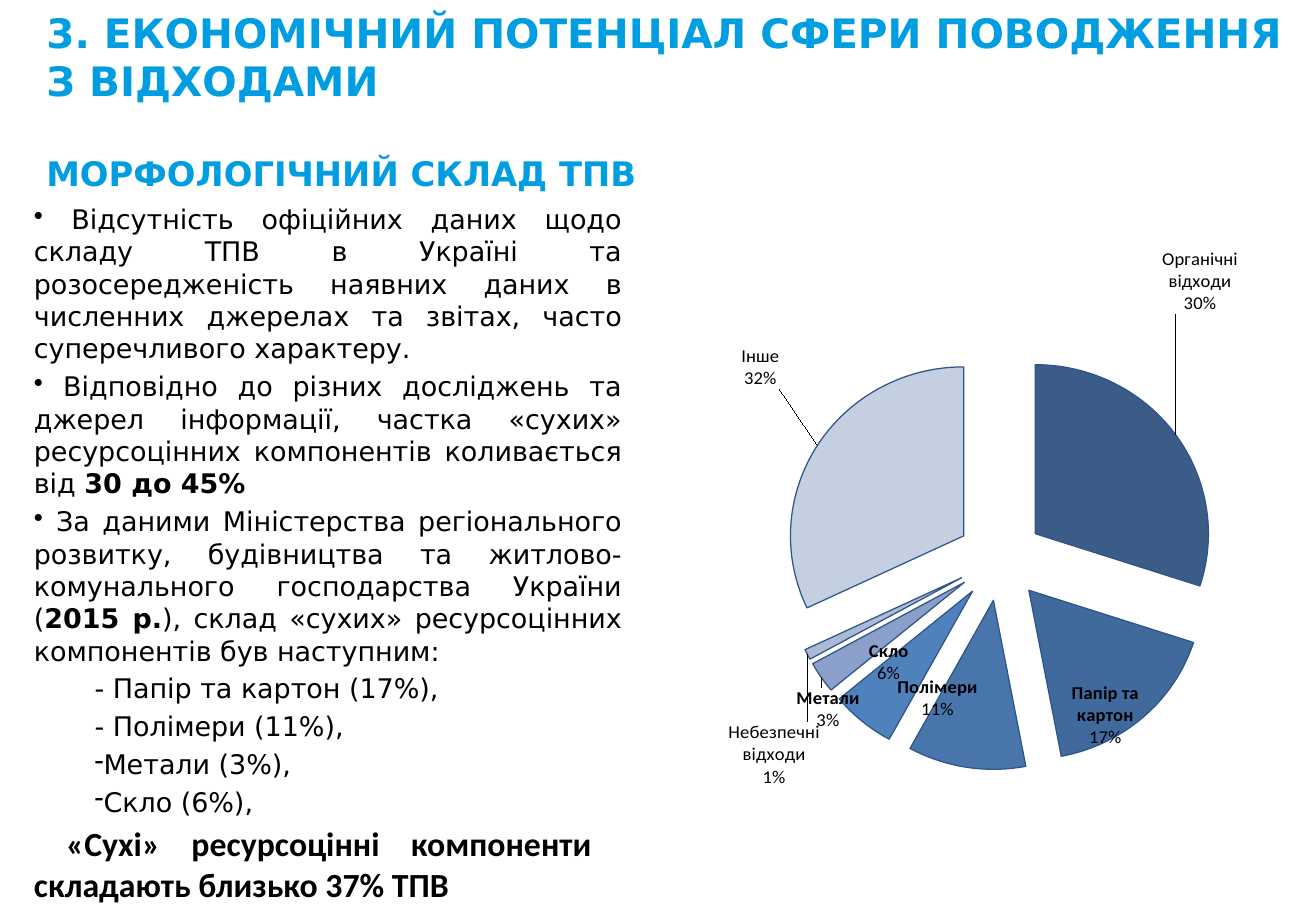
from dataclasses import dataclass

from lxml.etree import Element, SubElement
from pptx import Presentation
from pptx.chart.data import CategoryChartData
from pptx.dml.color import RGBColor
from pptx.enum.chart import XL_CHART_TYPE, XL_LABEL_POSITION
from pptx.enum.text import MSO_ANCHOR, PP_ALIGN
from pptx.oxml.ns import qn
from pptx.util import Cm, Pt


@dataclass(frozen=True)
class Theme:
    """Fonts, colours and type sizes of the slide."""

    body_font: str = "DejaVu Sans"
    chart_font: str = "Calibri"
    accent: str = "009DE0"
    ink: str = "000000"
    outline: str = "2F5588"
    title: int = 24
    subtitle: int = 20
    body: int = 16
    summary: int = 20
    label: int = 11


THEME = Theme()
INDENT = 1.27

BODY = [
    ("•", 0, [(" Відсутність офіційних даних щодо складу ТПВ в Україні та розосередженість "
               "наявних даних в численних джерелах та звітах, часто суперечливого характеру.", False)]),
    ("•", 0, [(" Відповідно до різних досліджень та джерел інформації, частка «сухих» "
               "ресурсоцінних компонентів коливається від ", False), ("30 до 45%", True)]),
    ("•", 0, [(" За даними Міністерства регіонального розвитку, будівництва та "
               "житлово-комунального господарства України (", False), ("2015 р.", True),
              ("), склад «сухих» ресурсоцінних компонентів був наступним:", False)]),
    (None, INDENT, [("- Папір та картон (17%),", False)]),
    (None, INDENT, [("- Полімери (11%),", False)]),
    ("-", INDENT, [("Метали (3%),", False)]),
    ("-", INDENT, [("Скло (6%),", False)]),
]
SUMMARY = "«Сухі» ресурсоцінні компоненти складають близько 37% ТПВ"

WASTE = [
    ("Organic Waste", 30, "3A5C87", ["Органічні", "відходи"], False, (-0.03, -0.2)),
    ("Paper and Cardboard", 17, "40699C", ["Папір та", "картон"], True, (-0.12, -0.07)),
    ("Polymers", 11, "4975AD", ["Полімери"], True, (0.02, -0.17)),
    ("Glass", 6, "4F81BD", ["Скло"], True, (0.08, -0.15)),
    ("Metals", 3, "8A9FC9", ["Метали"], True, (0.07, 0.01)),
    ("Hazardous Waste", 1, "AABAD7", ["Небезпечні", "відходи"], False, (0.03, 0.11)),
    ("Other", 32, "C5CFE2", ["Інше"], False, (-0.05, -0.09)),
]


def add_span(para, text, size, font=THEME.body_font, color=THEME.ink, bold=False):
    """Add one formatted run to a paragraph."""
    span = para.add_run()
    span.text = text
    span.font.name, span.font.size, span.font.bold = font, Pt(size), bold
    span.font.color.rgb = RGBColor.from_string(color)


def add_box(page, left, top, width, height):
    """Add a wrapping text box and return its text frame."""
    frame = page.shapes.add_textbox(Cm(left), Cm(top), Cm(width), Cm(height)).text_frame
    frame.word_wrap = True
    return frame


def format_body(para, bullet=None, indent=0):
    """Justify a paragraph and set its spacing, indent and bullet."""
    para.alignment = PP_ALIGN.JUSTIFY
    para.space_before = Pt(THEME.body * 0.2)
    properties = para._p.get_or_add_pPr()
    properties.set("marL", str(Cm(indent)))
    properties.set("indent", "0")
    if bullet:
        SubElement(properties, qn("a:buChar"), char=bullet)


def add_title(page):
    """Add the heading and the subheading."""
    frame = add_box(page, 0.97, 0.13, 25.93, 3.94)
    frame.margin_left = frame.margin_right = frame.margin_top = frame.margin_bottom = 0
    frame.vertical_anchor = MSO_ANCHOR.MIDDLE
    heading = frame.paragraphs[0]
    add_span(heading, "3. ЕКОНОМІЧНИЙ ПОТЕНЦІАЛ СФЕРИ ПОВОДЖЕННЯ З ВІДХОДАМИ",
             THEME.title, color=THEME.accent, bold=True)
    subheading = frame.add_paragraph()
    subheading.space_before = Pt(THEME.title * 1.17)
    add_span(subheading, "МОРФОЛОГІЧНИЙ СКЛАД ТПВ", THEME.subtitle, color=THEME.accent, bold=True)


def add_body(page):
    """Add the bulleted findings and the summary."""
    frame = add_box(page, 0.46, 4.11, 12.8, 14.4)
    for number, (bullet, indent, spans) in enumerate(BODY):
        para = frame.add_paragraph() if number else frame.paragraphs[0]
        format_body(para, bullet, indent)
        for text, bold in spans:
            add_span(para, text, THEME.body, bold=bold)
    para = frame.add_paragraph()
    format_body(para)
    para._p.get_or_add_pPr().set("marR", str(Cm(0.64)))
    add_span(para, " ", THEME.body)
    add_span(para, SUMMARY, THEME.summary, THEME.chart_font, bold=True)


def make_layout(**values):
    """Build a manual chart layout element."""
    layout = Element(qn("c:layout"))
    manual = SubElement(layout, qn("c:manualLayout"))
    for name, value in values.items():
        SubElement(manual, qn(f"c:{name}"), val=str(value))
    return layout


def style_slice(point, value, color, lines, bold, offset):
    """Colour one slice and place its label."""
    point.format.fill.solid()
    point.format.fill.fore_color.rgb = RGBColor.from_string(color)
    point.format.line.color.rgb = RGBColor.from_string(THEME.outline)
    point.format.line.width = Pt(0.75)
    label = point.data_label
    frame = label.text_frame
    for number, text in enumerate([*lines, f"{value}%"]):
        para = frame.add_paragraph() if number else frame.paragraphs[0]
        add_span(para, text, THEME.label, THEME.chart_font, bold=bold and number < len(lines))
    label.position = XL_LABEL_POSITION.OUTSIDE_END
    index = label._get_or_add_dLbl().find(qn("c:idx"))
    index.addnext(make_layout(x=offset[0], y=offset[1]))


def add_waste_pie(page):
    """Add the exploded pie of waste composition."""
    data = CategoryChartData()
    data.categories = [row[0] for row in WASTE]
    data.add_series("Series 1", [row[1] for row in WASTE])
    chart = page.shapes.add_chart(XL_CHART_TYPE.PIE, Cm(13.59), Cm(4.72), Cm(13.31), Cm(12.4), data).chart
    chart.has_legend = chart.has_title = False
    chart.font.name, chart.font.size = THEME.chart_font, Pt(THEME.label)
    chart.font.color.rgb = RGBColor.from_string(THEME.ink)
    plot = chart.plots[0]
    plot.vary_by_categories = True
    series = plot.series[0]
    for number, (_, *details) in enumerate(WASTE):
        style_slice(series.points[number], *details)
    explosion = Element(qn("c:explosion"), val="25")
    series._element.find(qn("c:dPt")).addprevious(explosion)
    area = chart._chartSpace.chart.plotArea
    for layout in area.findall(qn("c:layout")):
        area.remove(layout)
    area.insert(0, make_layout(layoutTarget="inner", xMode="edge", yMode="edge",
                               x=0.2, y=0.21, w=0.7, h=0.73))


def main():
    """Build and save the slide."""
    deck = Presentation()
    deck.slide_width, deck.slide_height = Cm(27.51), Cm(19.05)
    page = deck.slides.add_slide(deck.slide_layouts[6])
    add_title(page)
    add_body(page)
    add_waste_pie(page)
    deck.save("out.pptx")


if __name__ == "__main__":
    main()
